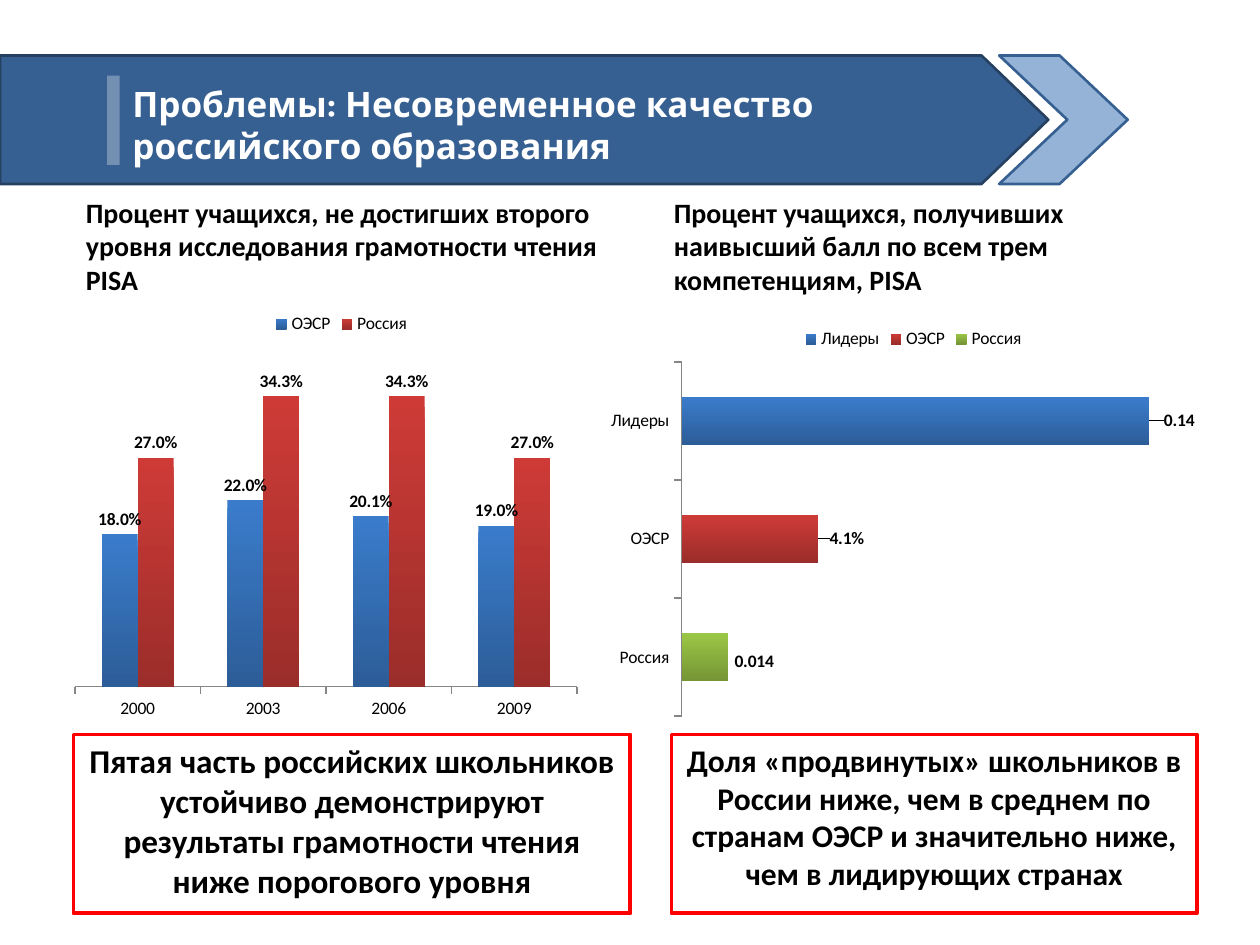
from dataclasses import dataclass
from lxml.etree import SubElement
from pptx import Presentation
from pptx.chart.data import CategoryChartData
from pptx.dml.color import RGBColor
from pptx.enum.chart import XL_CHART_TYPE as Kind, XL_LABEL_POSITION as Spot
from pptx.enum.chart import XL_LEGEND_POSITION as Side, XL_TICK_MARK as Tick
from pptx.enum.shapes import MSO_SHAPE as Form
from pptx.enum.text import MSO_ANCHOR as Anchor, MSO_AUTO_SIZE as Fit, PP_ALIGN as Align
from pptx.oxml import parse_xml
from pptx.oxml.ns import nsdecls, qn
from pptx.util import Inches, Pt

WIDE, HIGH = Inches(10), Inches(7.5)
NAVY, RED = "376092", "FF0000"
BLUES = ("3A7CCB", "2C5D98")
REDS = ("CE3B37", "9B2D2A")
GREENS = ("9BC746", "769535")


@dataclass
class Area:
    """A place given in percent of the slide's width and height."""
    x: float
    y: float
    w: float
    h: float

    def box(self) -> tuple:
        return tuple(int(part * full / 100) for part, full in
                     zip((self.x, self.y, self.w, self.h), (WIDE, HIGH) * 2))


@dataclass
class Block:
    area: Area
    form: Form
    fill: str
    line: str = ""
    width: float = 1.5
    bend: float | None = None
    alpha: int = 100


@dataclass
class Group:
    name: str
    vals: tuple
    tones: tuple
    code: str = "0.0%"
    shift: tuple | None = None  # label offset as shares of the chart


@dataclass
class Panel:
    head: Area
    title: str
    note: Area
    claim: str
    size: float


def color(code: str) -> RGBColor:
    return RGBColor.from_string(code)


def style(font, size: float, code: str = "000000", face: str = "Calibri", bold: bool = True) -> None:
    font.size, font.name, font.bold = Pt(size), face, bold
    font.color.rgb = color(code)


def write(shape, text: str, size: float, code: str = "000000", face: str = "Calibri",
          align: Align = Align.LEFT, anchor: Anchor = Anchor.TOP, before: float = 0) -> None:
    frame = shape.text_frame
    frame.word_wrap, frame.auto_size = True, Fit.NONE
    frame.vertical_anchor = anchor
    para = frame.paragraphs[0]
    para.alignment, para.space_before = align, Pt(before)
    run = para.add_run()
    run.text = text
    style(run.font, size, code, face)


def draw(slide, block: Block):
    shape = slide.shapes.add_shape(block.form, *block.area.box())
    shape.shadow.inherit = False
    shape.fill.solid()
    shape.fill.fore_color.rgb = color(block.fill)
    if block.alpha < 100:
        tint = shape.fill._xPr.find(f".//{qn('a:srgbClr')}")
        SubElement(tint, qn("a:alpha"), val=str(block.alpha * 1000))
    if block.line:
        shape.line.color.rgb = color(block.line)
        shape.line.width = Pt(block.width)
    else:
        shape.line.fill.background()
    if block.bend is not None:
        shape.adjustments[0] = block.bend
    return shape


def layout(x: float, y: float, extra: str = ""):
    return parse_xml(f'<c:layout {nsdecls("c")}><c:manualLayout>{extra}'
                     f'<c:x val="{x}"/><c:y val="{y}"/></c:manualLayout></c:layout>')


def nudge(series, group: Group) -> None:
    """Move the label of each shown point off the end of its bar."""
    for place, val in enumerate(group.vals):
        if val is None:
            continue
        label = series.points[place].data_label
        style(label.font, 10)
        label.position = Spot.INSIDE_END
        first = series._element.find(f".//{qn('c:dLbl')}/{qn('c:idx')}")
        first.addnext(parse_xml(f'<c:numFmt {nsdecls("c")} formatCode="{group.code}" sourceLinked="0"/>'))
        first.addnext(layout(*group.shift))


def plot(slide, kind: Kind, area: Area, cats: tuple, groups: list[Group], top: float, lap: int):
    data = CategoryChartData()
    data.categories = cats
    for group in groups:
        data.add_series(group.name, group.vals, group.code)
    chart = slide.shapes.add_chart(kind, *area.box(), data).chart
    style(chart.font, 10, bold=False)
    chart.has_title = False
    chart.has_legend = True
    chart.legend.position = Side.TOP
    chart.legend.include_in_layout = False
    axis = chart.value_axis
    axis.visible = axis.has_major_gridlines = False
    axis.minimum_scale, axis.maximum_scale = 0, top
    axis = chart.category_axis
    axis.major_tick_mark = Tick.OUTSIDE
    axis.format.line.color.rgb = color("868686")
    bars = chart.plots[0]
    bars.gap_width, bars.overlap, bars.vary_by_categories = 150, lap, False
    for series, group in zip(bars.series, groups):
        series.invert_if_negative = False
        fill = series.format.fill
        fill.gradient()
        fill.gradient_angle = 270
        for stop, tone in zip(fill.gradient_stops, group.tones):
            stop.color.rgb = color(tone)
        labels = series.data_labels
        labels.show_value = True
        labels.number_format, labels.number_format_is_linked = group.code, False
        style(labels.font, 10)
        labels.position = Spot.INSIDE_END if group.shift else Spot.OUTSIDE_END
        if group.shift:
            nudge(series, group)
    return chart


def frame(chart, x: float, y: float, w: float, h: float) -> None:
    """Fix the inner plot area as shares of the chart."""
    spot = layout(x, y, '<c:layoutTarget val="inner"/><c:xMode val="edge"/><c:yMode val="edge"/>')
    for name, val in (("c:w", w), ("c:h", h)):
        SubElement(spot[0], qn(name), val=str(val))
    area = chart._chartSpace.find(f".//{qn('c:plotArea')}")
    for old in area.findall(qn("c:layout")):
        area.remove(old)
    area.insert(0, spot)


BANNER = [
    Block(Area(0, 5.87, 83.2, 13.6), Form.PENTAGON, NAVY, "254061", bend=0.52),
    Block(Area(79.3, 5.87, 10.2, 13.6), Form.CHEVRON, "95B3D7", NAVY, bend=0.53),
    Block(Area(8.5, 8, 1, 9.47), Form.RECTANGLE, "FFFFFF", alpha=30),
]
PANELS = [
    Panel(Area(5.83, 20, 44.2, 12.13),
          "Процент учащихся, не достигших второго уровня исследования грамотности чтения PISA",
          Area(5.83, 77.73, 44.2, 18.93),
          "Пятая часть российских школьников устойчиво демонстрируют результаты "
          "грамотности чтения ниже порогового уровня", 19),
    Panel(Area(52.5, 20, 44.2, 12.13),
          "Процент учащихся, получивших наивысший балл по всем трем компетенциям, PISA",
          Area(53.3, 77.73, 41.7, 18.93),
          "Доля «продвинутых» школьников в России ниже, чем в среднем по странам ОЭСР "
          "и значительно ниже, чем в лидирующих странах", 18),
]
LEADERS = [
    Group("Лидеры", (None, None, 0.14), BLUES, "General", (0.08, 0)),
    Group("ОЭСР", (None, 0.041, None), REDS, "0.0%", (0.08, 0)),
    Group("Россия", (0.014, None, None), GREENS, "General", (0.08, 0.01)),
]
READING = [
    Group("ОЭСР", (0.18, 0.22, 0.201, 0.19), BLUES),
    Group("Россия", (0.27, 0.343, 0.343, 0.27), REDS),
]


def main() -> None:
    deck = Presentation()
    deck.slide_width, deck.slide_height = WIDE, HIGH
    slide = deck.slides.add_slide(deck.slide_layouts[5])
    for block in BANNER:
        draw(slide, block)
    title = slide.shapes.title
    title.left, title.top, title.width, title.height = Area(9.5, 6.67, 62.2, 12.93).box()
    write(title, "Проблемы: Несовременное качество российского образования", 20,
          "FFFFFF", "Karla", anchor=Anchor.MIDDLE)
    slide.shapes._spTree.append(title._element)  # bring in front of the banner
    for panel in PANELS:
        note = draw(slide, Block(panel.note, Form.RECTANGLE, "FFFFFF", RED, 2.25))
        write(note, panel.claim, panel.size, align=Align.CENTER, before=panel.size / 5)
    plot(slide, Kind.BAR_STACKED, Area(47.5, 33.33, 50, 43.33),
         ("Россия", "ОЭСР", "Лидеры"), LEADERS, 0.16, 100)
    chart = plot(slide, Kind.COLUMN_CLUSTERED, Area(2.5, 31.73, 49.2, 46),
                 ("2000", "2003", "2006", "2009"), READING, 0.4, 0)
    frame(chart, 0.07, 0.11, 0.81, 0.78)
    for panel in PANELS:
        write(slide.shapes.add_textbox(*panel.head.box()), panel.title, 16)
    deck.save("out.pptx")


if __name__ == "__main__":
    main()
